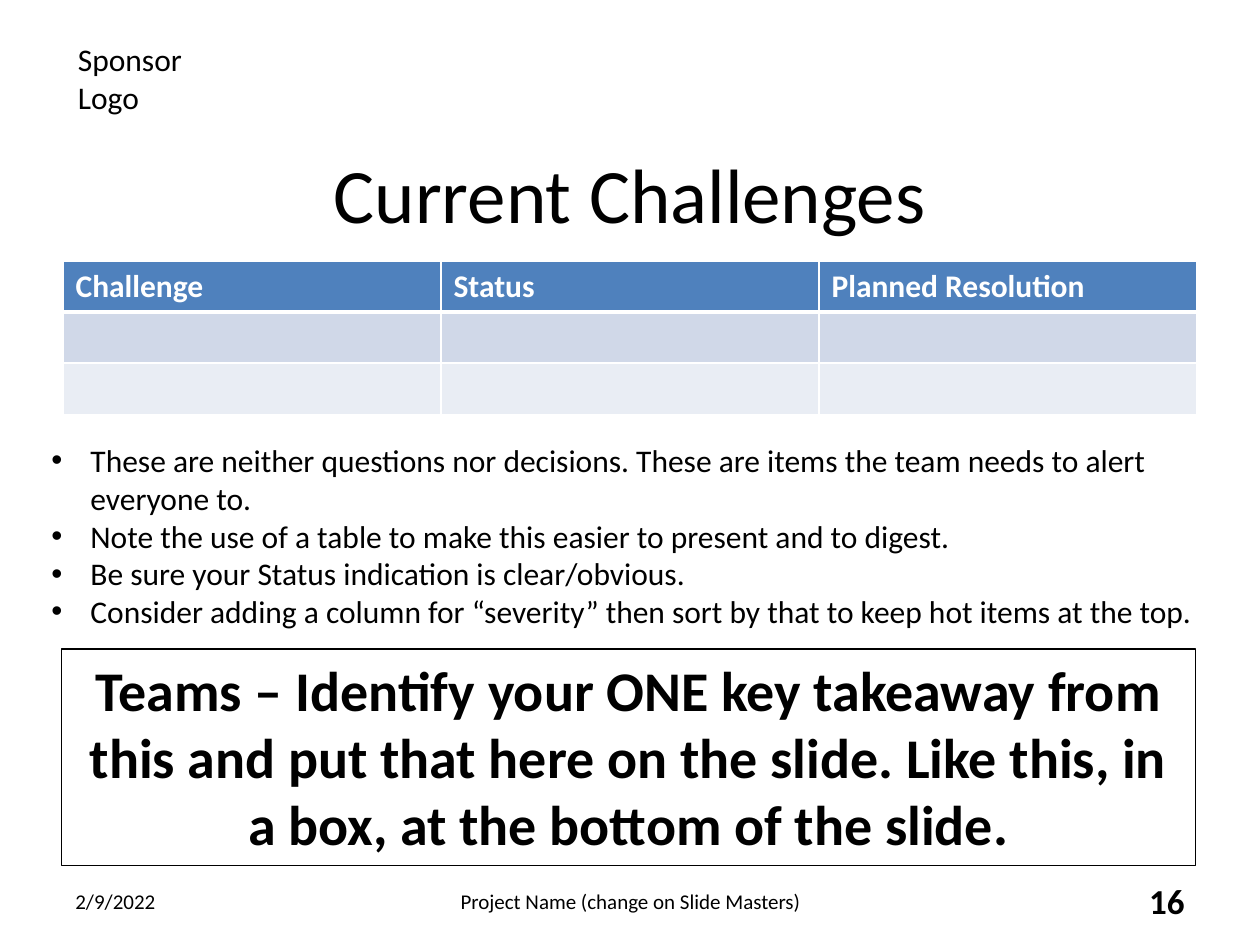
import pptx
import pptx.util
import pptx.dml.color
import pptx.enum.shapes
import pptx.enum.text
import pptx.oxml
import pptx.oxml.ns

Inches, Pt = pptx.util.Inches, pptx.util.Pt
ALIGN = pptx.enum.text.PP_ALIGN
ANCHOR = pptx.enum.text.MSO_ANCHOR

COLORS = {"black": "000000", "white": "FFFFFF", "header": "4F81BD",
          "band_dark": "D0D8E8", "band_light": "E9EDF4"}
TITLE = "Current Challenges"
TITLE_AREA = (0.5, 1.12, 9, 0.82)
HEADERS = ["Challenge", "Status", "Planned Resolution"]
ROW_FILLS = ["header", "band_dark", "band_light"]
TABLE_AREA = (0.5, 2.07, 9, 1.22)
SPONSOR = "Sponsor\nLogo"
ADVICE = [
    "These are neither questions nor decisions. These are items the team needs to alert everyone to.",
    "Note the use of a table to make this easier to present and to digest.",
    "Be sure your Status indication is clear/obvious.",
    "Consider adding a column for “severity” then sort by that to keep hot items at the top.",
]
TAKEAWAY = ("Teams – Identify your ONE key takeaway from this and put that here on the slide. "
            "Like this, in a box, at the bottom of the slide.")
FOOTERS = [
    ("2/9/2022", 0.5, 2.33, ALIGN.LEFT, {"size": Pt(12)}),
    ("Project Name (change on Slide Masters)", 3.42, 3.17, ALIGN.CENTER, {"size": Pt(12)}),
    ("16", 7.17, 2.33, ALIGN.RIGHT, {"size": Pt(20), "bold": True}),
]
BULLET_INDENT = 0.31


def rgb(name):
    return pptx.dml.color.RGBColor.from_string(COLORS[name])


def place(area):
    return [Inches(length) for length in area]


def paint(shape, name):
    shape.fill.solid()
    shape.fill.fore_color.rgb = rgb(name)


def format_font(font, color="black", **values):
    for key, value in {"name": "Calibri", "size": Pt(18), **values}.items():
        setattr(font, key, value)
    font.color.rgb = rgb(color)


def write(frame, texts, align=ALIGN.LEFT, anchor=ANCHOR.TOP, bullets=False, **values):
    frame.word_wrap = True
    frame.vertical_anchor = anchor
    for index, text in enumerate(texts):
        para = frame.paragraphs[0] if index == 0 else frame.add_paragraph()
        para.text = text
        para.alignment = align
        if bullets:
            add_bullet(para)
        for span in para.runs:
            format_font(span.font, **values)


def add_bullet(para):
    settings = para._p.get_or_add_pPr()
    settings.set("marL", str(Inches(BULLET_INDENT)))
    settings.set("indent", str(-Inches(BULLET_INDENT)))
    namespace = pptx.oxml.ns.nsdecls("a")
    for element in ('buFont {} typeface="Arial"', 'buChar {} char="•"'):
        settings.append(pptx.oxml.parse_xml(f"<a:{element.format(namespace)}/>"))


def add_borders(cell, widths):
    settings = cell._tc.get_or_add_tcPr()
    for index, (side, width) in enumerate(widths.items()):
        settings.insert(index, pptx.oxml.parse_xml(
            f'<a:ln{side} {pptx.oxml.ns.nsdecls("a")} w="{Pt(width)}">'
            f'<a:solidFill><a:srgbClr val="{COLORS["white"]}"/></a:solidFill></a:ln{side}>'))


def add_text(page, area, texts, **values):
    box = page.shapes.add_textbox(*place(area))
    write(box.text_frame, texts, **values)


def add_challenges(page):
    table = page.shapes.add_table(len(ROW_FILLS), len(HEADERS), *place(TABLE_AREA)).table
    for row, fill in enumerate(ROW_FILLS):
        for column, header in enumerate(HEADERS):
            cell = table.cell(row, column)
            paint(cell, fill)
            add_borders(cell, {"L": 1, "R": 1, "T": 3 if row == 1 else 1, "B": 3 if row == 0 else 1})
            if row == 0:
                write(cell.text_frame, [header], color="white", bold=True)
            else:
                format_font(cell.text_frame.paragraphs[0].font)


def main():
    deck = pptx.Presentation()
    deck.slide_width, deck.slide_height = Inches(10), Inches(7.5)
    page = deck.slides.add_slide(deck.slide_layouts[5])
    page.background.fill.solid()
    page.background.fill.fore_color.rgb = rgb("white")

    title = page.shapes.title
    title.left, title.top, title.width, title.height = place(TITLE_AREA)
    write(title.text_frame, [TITLE], align=ALIGN.CENTER, anchor=ANCHOR.MIDDLE, size=Pt(44))

    add_text(page, (0.52, 0.27, 1.53, 0.71), [SPONSOR])
    add_challenges(page)
    for text, left, width, align, values in FOOTERS:
        add_text(page, (left, 6.95, width, 0.4), [text], align=align, anchor=ANCHOR.MIDDLE, **values)
    add_text(page, (0.31, 3.45, 9.37, 1.62), ADVICE, bullets=True)

    takeaway = page.shapes.add_shape(pptx.enum.shapes.MSO_SHAPE.RECTANGLE, *place((0.49, 5.15, 9, 1.72)))
    takeaway.shadow.inherit = False
    takeaway.fill.background()
    takeaway.line.color.rgb = rgb("black")
    takeaway.line.width = Pt(0.75)
    write(takeaway.text_frame, [TAKEAWAY], align=ALIGN.CENTER, size=Pt(32), bold=True)

    deck.save("out.pptx")


if __name__ == "__main__":
    main()
